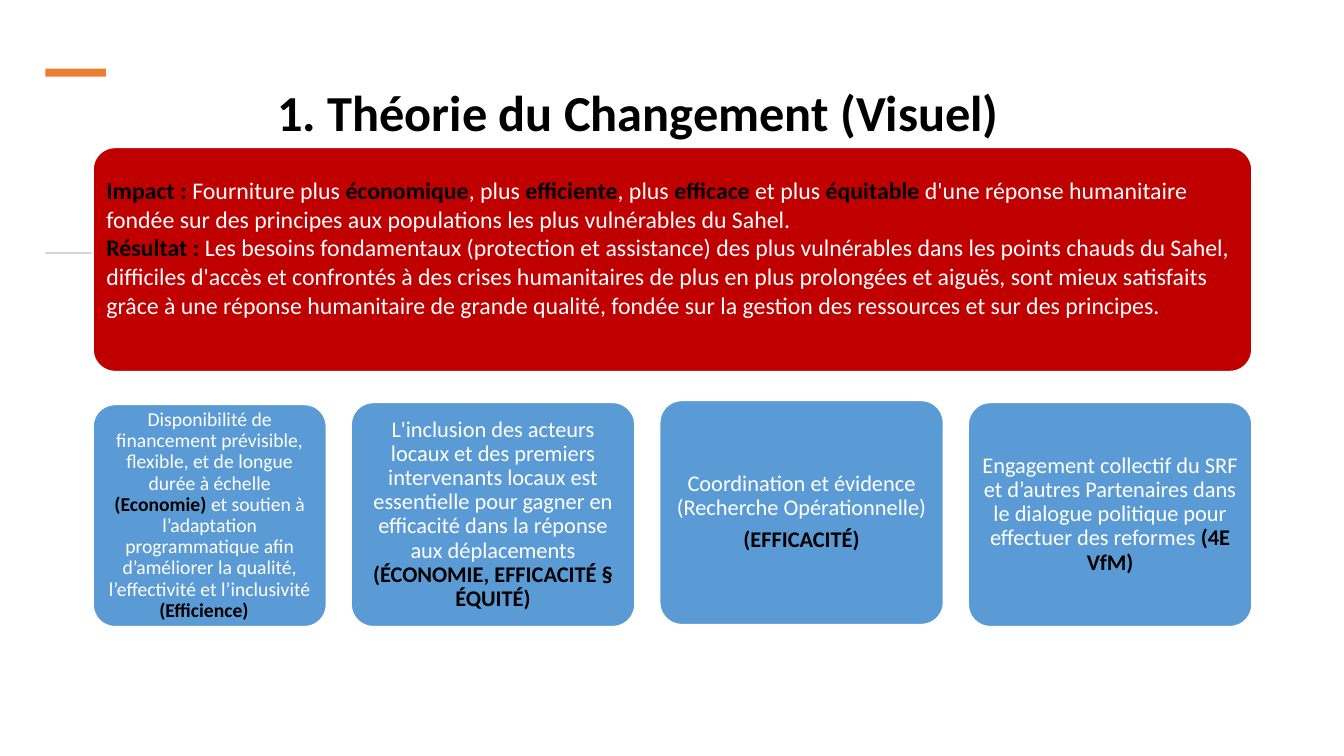
from pptx import Presentation
from pptx.dml.color import RGBColor
from pptx.enum.shapes import MSO_SHAPE as Shape
from pptx.enum.text import MSO_ANCHOR as Anchor, PP_ALIGN as Align
from pptx.util import Inches, Pt

BLACK = RGBColor(0x00, 0x00, 0x00)
WHITE = RGBColor(0xFF, 0xFF, 0xFF)
RED = RGBColor(0xC0, 0x00, 0x00)
BLUE = RGBColor(0x5B, 0x9B, 0xD5)
ORANGE = RGBColor(0xED, 0x7D, 0x31)
GREY = RGBColor(0xD5, 0xD5, 0xD5)

FONT = "Calibri"
EDGE = 0.45             # left edge of title and accents
LEFT, WIDTH = 0.92, 11.5  # block of cards
GAP = 0.24              # space between pillars
PAD = 0.07              # added to the inset of the rounded corners

# Text between asterisks is bold and black
GOALS = [
    "*Impact : *Fourniture plus *économique*, plus *efficiente*, plus *efficace* "
    "et plus *équitable *d'une réponse humanitaire fondée sur des principes aux "
    "populations les plus vulnérables du Sahel.",
    "*Résultat : *Les besoins fondamentaux (protection et assistance) des plus "
    "vulnérables dans les points chauds du Sahel, difficiles d'accès et confrontés "
    "à des crises humanitaires de plus en plus prolongées et aiguës, sont mieux "
    "satisfaits grâce à une réponse humanitaire de grande qualité, fondée sur la "
    "gestion des ressources et sur des principes.",
]

# Top, width, height, text size, paragraphs
PILLARS = [
    (4.01, 2.32, 2.21, 14, [
        "Disponibilité de financement prévisible, flexible, et de longue durée à "
        "échelle *(Economie) *et soutien à l’adaptation programmatique afin "
        "d’améliorer la qualité, l’effectivité et l’inclusivité *(Efficience)\t*"]),
    (3.99, 2.82, 2.23, 16, [
        "L'inclusion des acteurs locaux et des premiers intervenants locaux est "
        "essentielle pour gagner en efficacité dans la réponse aux déplacements "
        "*(ÉCONOMIE, EFFICACITÉ § ÉQUITÉ)*"]),
    (3.97, 2.82, 2.23, 16, [
        "Coordination et évidence (Recherche Opérationnelle)",
        "*(EFFICACITÉ)*"]),
    (3.99, 2.82, 2.23, 16, [
        "Engagement collectif du SRF et d’autres Partenaires dans le dialogue "
        "politique pour effectuer des reformes *(4E VfM)*"]),
]


def add_block(slide, kind, box, fill):
    block = slide.shapes.add_shape(kind, *map(Inches, box))
    block.shadow.inherit = False
    block.fill.solid()
    block.fill.fore_color.rgb = fill
    block.line.fill.background()
    return block


def add_rich(para, text, size):
    for i, part in enumerate(text.split("*")):
        if part:
            run = para.add_run()
            run.text = part
            run.font.name = FONT
            run.font.size = Pt(size)
            run.font.bold = i % 2 == 1
            run.font.color.rgb = BLACK if i % 2 else WHITE


def add_card(slide, box, fill, texts, size, align=Align.CENTER,
             lead=0.9, after=0, foot=PAD):
    card = add_block(slide, Shape.ROUNDED_RECTANGLE, box, fill)
    card.adjustments[0] = 0.1
    card.line.color.rgb = WHITE
    card.line.width = Pt(1.5)
    frame = card.text_frame
    frame.word_wrap = True
    frame.vertical_anchor = Anchor.MIDDLE
    frame.margin_left = frame.margin_right = frame.margin_top = Inches(PAD)
    frame.margin_bottom = Inches(foot)
    for i, text in enumerate(texts):
        para = frame.add_paragraph() if i else frame.paragraphs[0]
        para.alignment = align
        para.line_spacing = lead
        para.space_after = Pt(after)
        add_rich(para, text, size)


def add_title(slide, text):
    box = slide.shapes.add_textbox(*map(Inches, (EDGE, 0.68, 11.76, 0.78)))
    frame = box.text_frame
    frame.word_wrap = True
    frame.vertical_anchor = Anchor.BOTTOM
    frame.text = text
    para = frame.paragraphs[0]
    para.alignment = Align.CENTER
    para.line_spacing = 0.9
    font = para.runs[0].font
    font.name, font.size, font.bold = FONT, Pt(36), True
    font.color.rgb = BLACK


def main():
    deck = Presentation()
    deck.slide_width, deck.slide_height = Inches(13.33), Inches(7.5)
    slide = deck.slides.add_slide(deck.slide_layouts[6])

    # Title and accents
    add_title(slide, "1. Théorie du Changement (Visuel)")
    add_block(slide, Shape.RECTANGLE, (EDGE, 0.68, 0.6, 0.08), ORANGE)
    add_block(slide, Shape.RECTANGLE, (EDGE, 2.5, 4.8, 0.02), GREY)

    # Impact and result
    add_card(slide, (LEFT, 1.46, WIDTH, 2.23), RED, GOALS, 17,
             align=Align.LEFT, lead=1.0, foot=PAD + 0.24)

    # Pillars, left to right
    left = LEFT
    for top, width, height, size, texts in PILLARS:
        add_card(slide, (left, top, width, height), BLUE, texts, size,
                 after=0.35 * size)
        left += width + GAP

    deck.save("out.pptx")


if __name__ == "__main__":
    main()
